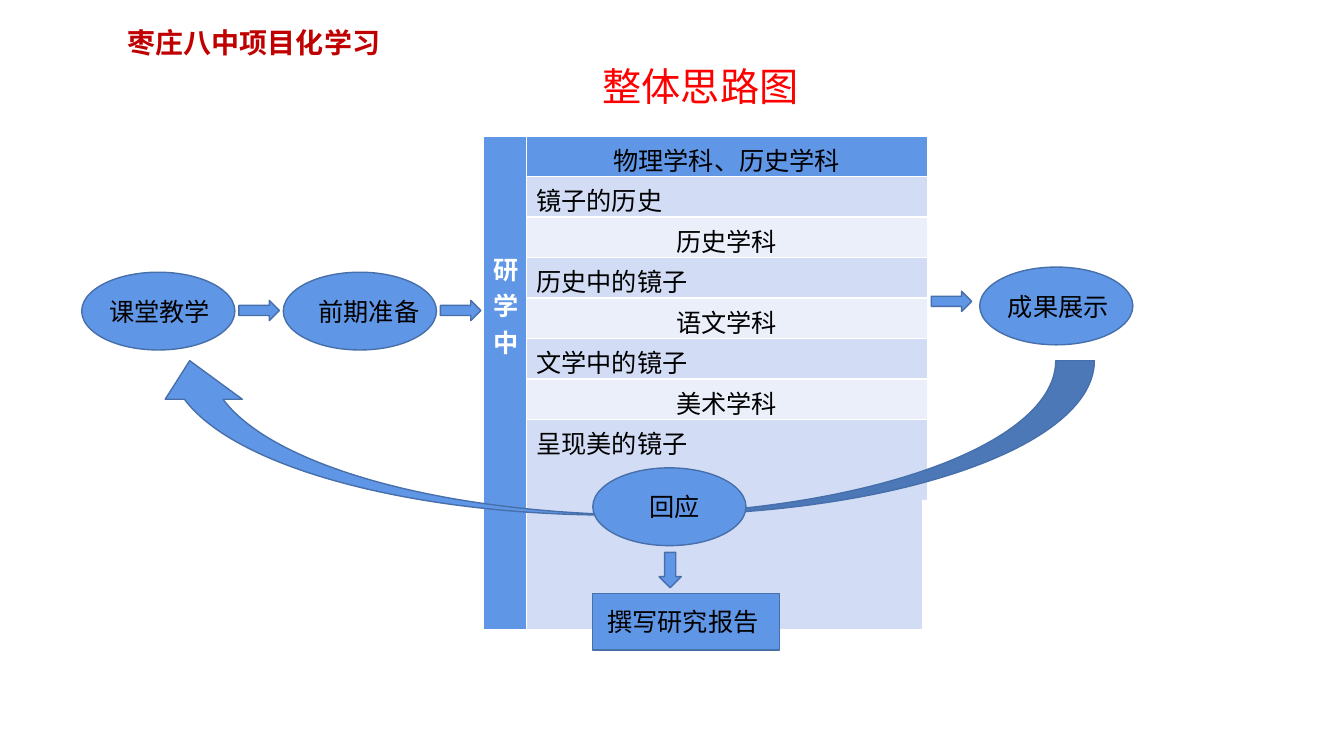
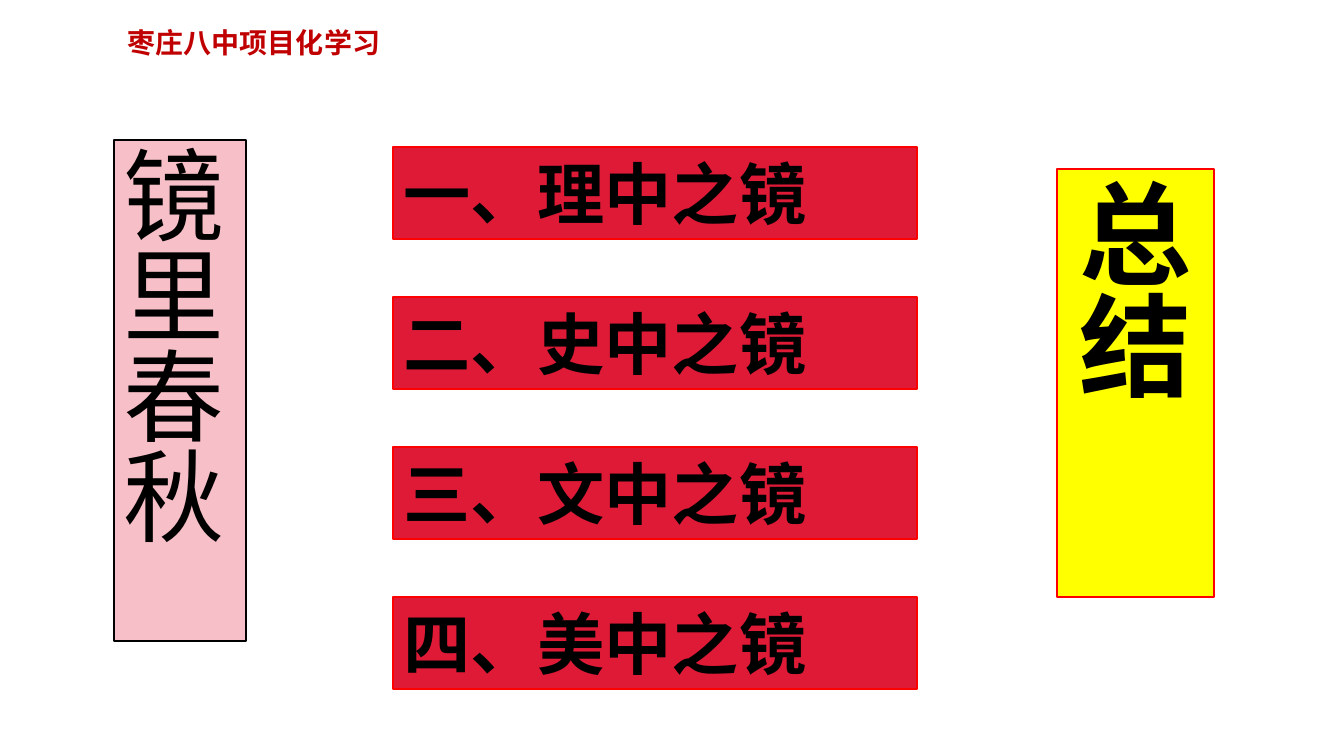
import pptx
import pptx.util
import pptx.dml.color
import pptx.enum.shapes
import pptx.enum.text
import lxml.etree

Cm = pptx.util.Cm
KIND = pptx.enum.shapes.MSO_SHAPE
ALIGN = pptx.enum.text.PP_ALIGN
ANCHOR = pptx.enum.text.MSO_ANCHOR

BLUE, EDGE, PALE, FAINT = "6096E6", "476FAA", "D2DDF5", "EAEFFA"
BLACK, WHITE, RED = "000000", "FFFFFF", "FF0000"
LATIN, HAN = "Arial", "Noto Sans CJK SC"

HEADER = "枣庄八中项目化学习"
TITLE = "整体思路图"
PHASE = "研学中"
TOPICS = [
    ("物理学科、历史学科", "镜子的历史"),
    ("历史学科", "历史中的镜子"),
    ("语文学科", "文学中的镜子"),
    ("美术学科", "呈现美的镜子"),
]
# kind, text, sideways text shift, (left, top, width, height) in cm
STEPS = [
    (KIND.OVAL, "课堂教学", 0.03, (2.06, 6.86, 3.86, 1.96)),
    (KIND.OVAL, "前期准备", 0.23, (7.14, 6.86, 3.86, 1.96)),
    (KIND.OVAL, "成果展示", 0.05, (24.69, 6.73, 3.86, 1.96)),
    (KIND.OVAL, "回应", 0.13, (14.94, 11.79, 3.86, 1.96)),
    (KIND.RECTANGLE, "撰写研究报告", -0.08, (14.94, 14.96, 4.7, 1.42)),
]
ARROWS = [
    (KIND.RIGHT_ARROW, (6.02, 7.57, 1.02, 0.51)),
    (KIND.RIGHT_ARROW, (11.1, 7.57, 1.02, 0.51)),
    (KIND.RIGHT_ARROW, (23.47, 7.34, 1.02, 0.51)),
    (KIND.DOWN_ARROW, (16.61, 13.92, 0.56, 0.89)),
]
RETURN = (3.81, 9.09, 23.77, 3.89)
NOTCH = (23.24, 12.6, 10.63, 6.45)
TABLE = (12.19, 3.43)
COLS = (1.07, 10.11)
ROW, LAST = 1.02, 4.83

MIRRORS = ["一、理中之镜", "二、史中之镜", "三、文中之镜", "四、美中之镜"]
MIRROR_TOP, MIRROR_STEP = 3.71, 3.78
# text, place, fill, line, size, bold, align, top inset
PILLARS = [
    ("镜里春秋", (2.87, 3.53, 3.33, 12.62), "F7BFC7", BLACK, 72, False, ALIGN.LEFT, 0.33),
    ("总结", (26.64, 4.27, 3.96, 10.77), "FFFF00", RED, 80, True, ALIGN.CENTER, 0.46),
]


def paint(color, code):
    color.rgb = pptx.dml.color.RGBColor.from_string(code)


def write(frame, text, size, code=BLACK, bold=False, face=LATIN, align=ALIGN.LEFT):
    """Fill a text frame with one paragraph and return it."""
    para = frame.paragraphs[0]
    para.text = text
    para.alignment = align
    font = para.font
    font.size = pptx.util.Pt(size)
    font.bold = bold
    font.name = face
    paint(font.color, code)
    if face == HAN:
        latin = para._p.find(".//" + pptx.oxml.ns.qn("a:latin"))
        ea = lxml.etree.Element(pptx.oxml.ns.qn("a:ea"), typeface=face)
        latin.addnext(ea)
    return para


def draw(slide, kind, place, fill=BLUE, line=EDGE, width=1):
    shape = slide.shapes.add_shape(kind, *map(Cm, place))
    shape.shadow.inherit = False
    shape.fill.solid()
    paint(shape.fill.fore_color, fill)
    if line:
        paint(shape.line.color, line)
        shape.line.width = pptx.util.Pt(width)
    else:
        shape.line.fill.background()
    return shape


def label(slide, place, *args, **style):
    frame = slide.shapes.add_textbox(*map(Cm, place)).text_frame
    frame.word_wrap = True
    write(frame, *args, **style)


def start(deck):
    """Add a blank slide with the shared header."""
    slide = deck.slides.add_slide(deck.slide_layouts[6])
    label(slide, (2.97, 0.53, 7.54, 1.12), HEADER, 20, "C00000", bold=True, face=HAN)
    return slide


def shade(cell, code):
    cell.fill.solid()
    paint(cell.fill.fore_color, code)


def grid(slide):
    lines = [text for pair in TOPICS for text in pair]
    count = len(lines)
    heights = [ROW] * (count - 1) + [LAST]
    size = (sum(COLS), sum(heights))
    table = slide.shapes.add_table(count, 2, *map(Cm, TABLE + size)).table
    for col, width in zip(table.columns, COLS):
        col.width = Cm(width)
    for i, (text, height) in enumerate(zip(lines, heights)):
        table.rows[i].height = Cm(height)
        head = i % 2 == 0
        cell = table.cell(i, 1)
        shade(cell, BLUE if i == 0 else FAINT if head else PALE)
        write(cell.text_frame, text, 18, face=LATIN if head else HAN,
              align=ALIGN.CENTER if head else ALIGN.LEFT)
    side = table.cell(0, 0)
    side.merge(table.cell(count - 1, 0))
    shade(side, BLUE)
    side.margin_top = Cm(2.87)
    write(side.text_frame, PHASE, 18, WHITE, bold=True)


def flow(deck):
    slide = start(deck)
    grid(slide)
    back = draw(slide, KIND.CURVED_UP_ARROW, RETURN)
    back._element.spPr.xfrm.set("flipH", "1")
    draw(slide, KIND.RECTANGLE, NOTCH, WHITE, None)
    for kind, place in ARROWS:
        draw(slide, kind, place)
    for kind, text, shift, place in STEPS:
        frame = draw(slide, kind, place).text_frame
        frame.word_wrap = True
        frame.margin_left, frame.margin_right = Cm(shift), Cm(-shift)
        frame.margin_top = frame.margin_bottom = 0
        frame.vertical_anchor = ANCHOR.MIDDLE
        write(frame, text, 18, align=ALIGN.CENTER)
    label(slide, (14.94, 1.45, 8.18, 1.45), TITLE, 28, RED)


def summary(deck):
    slide = start(deck)
    for i, text in enumerate(MIRRORS):
        place = (9.91, MIRROR_TOP + i * MIRROR_STEP, 13.21, 2.31)
        frame = draw(slide, KIND.RECTANGLE, place, "DE1A37", RED, 1.5).text_frame
        frame.word_wrap = True
        frame.vertical_anchor = ANCHOR.MIDDLE
        write(frame, text, 48, bold=True, face=HAN)
    for text, place, fill, line, size, bold, align, inset in PILLARS:
        frame = draw(slide, KIND.RECTANGLE, place, fill, line, 1.5).text_frame
        frame.word_wrap = True
        frame.vertical_anchor = ANCHOR.TOP
        frame.margin_top = Cm(inset)
        para = write(frame, text, size, bold=bold, face=HAN, align=align)
        para.line_spacing = 0.83


def main():
    deck = pptx.Presentation()
    deck.slide_width, deck.slide_height = Cm(33.87), Cm(19.05)
    flow(deck)
    summary(deck)
    deck.save("out.pptx")


if __name__ == "__main__":
    main()
